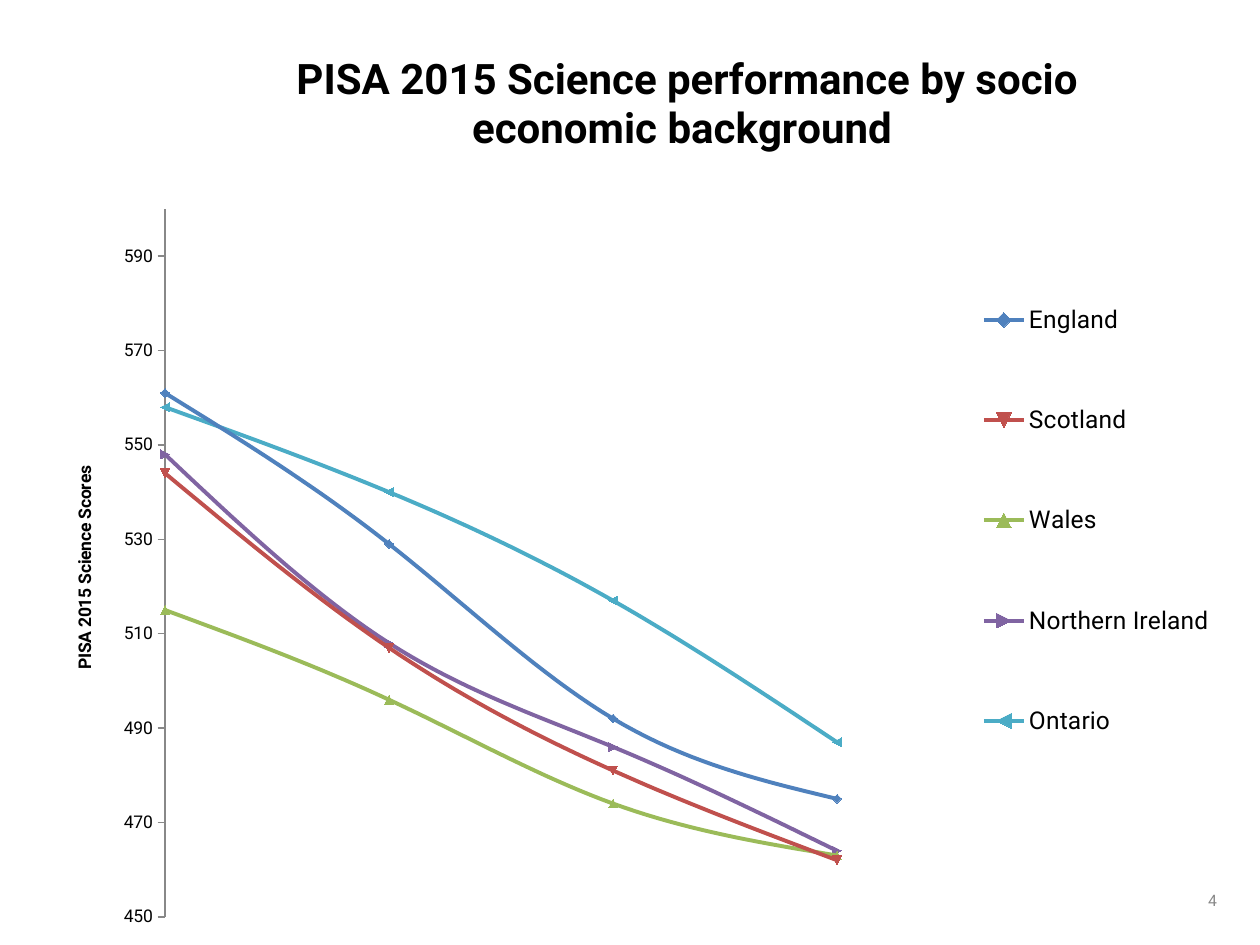
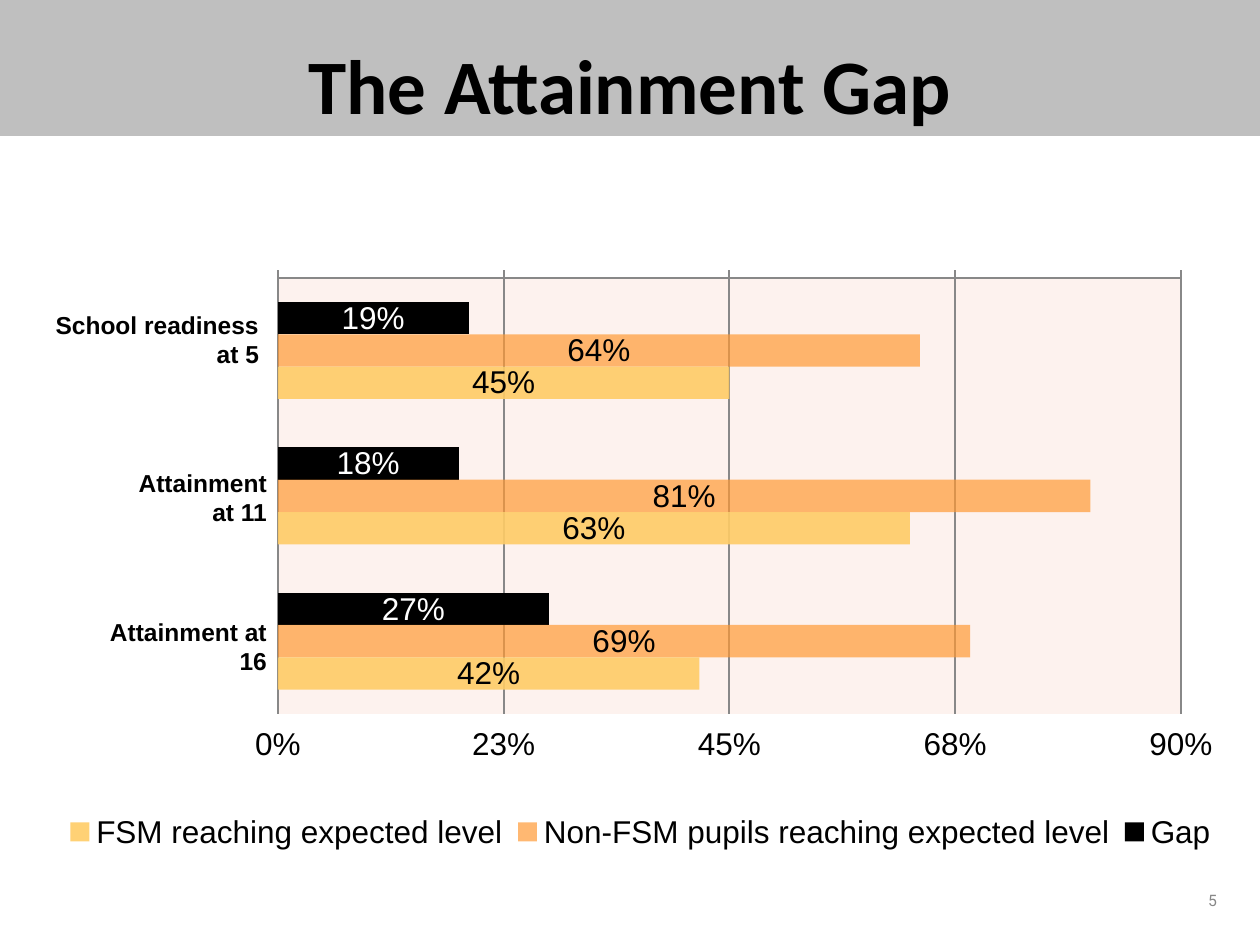
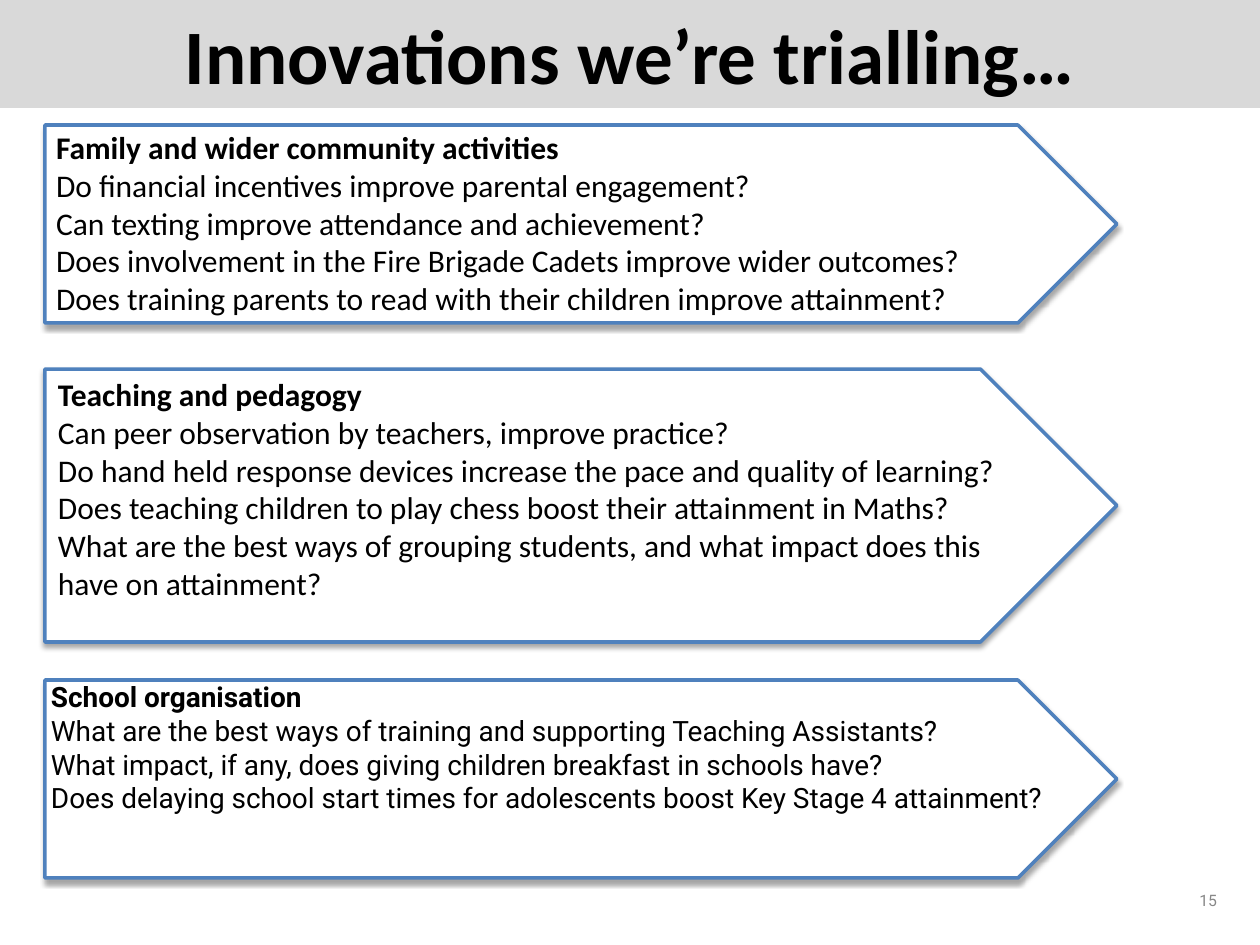
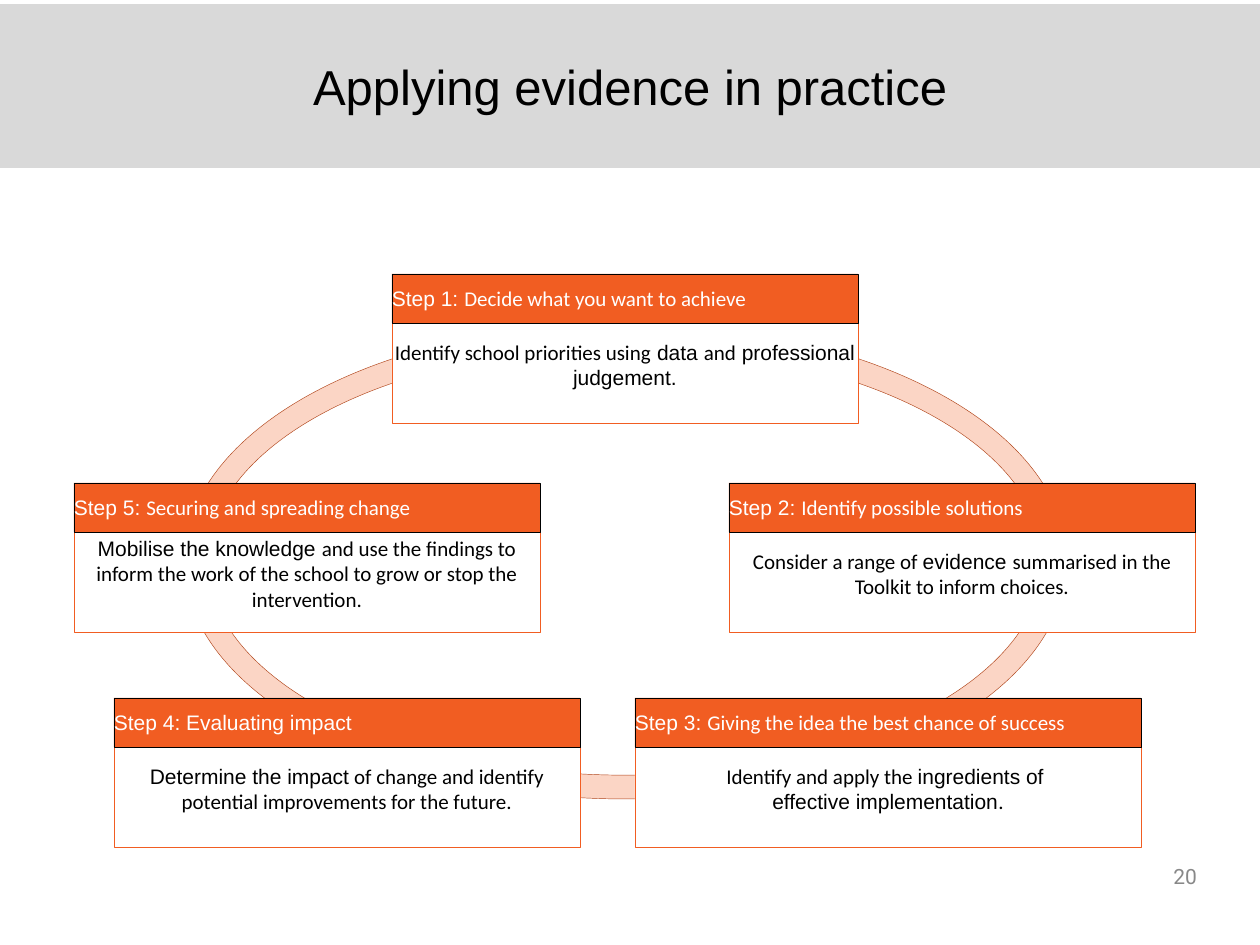
from lxml import etree
from pptx import Presentation
from pptx.chart.data import CategoryChartData, XyChartData
from pptx.dml.color import RGBColor
from pptx.enum.chart import XL_CHART_TYPE, XL_LABEL_POSITION, XL_LEGEND_POSITION
from pptx.enum.chart import XL_TICK_LABEL_POSITION, XL_TICK_MARK
from pptx.enum.shapes import MSO_SHAPE
from pptx.enum.text import MSO_ANCHOR, MSO_AUTO_SIZE, PP_ALIGN
from pptx.oxml import parse_xml
from pptx.oxml.ns import nsdecls, qn
from pptx.util import Pt

SCALE = 914400 / 126
LEFT, MID, RIGHT = PP_ALIGN.LEFT, PP_ALIGN.CENTER, PP_ALIGN.RIGHT
TOP, CORE, BASE = MSO_ANCHOR.TOP, MSO_ANCHOR.MIDDLE, MSO_ANCHOR.BOTTOM
RECT, ARROW, RING = MSO_SHAPE.RECTANGLE, MSO_SHAPE.PENTAGON, MSO_SHAPE.DONUT
SCATTER, BARS = XL_CHART_TYPE.XY_SCATTER_SMOOTH, XL_CHART_TYPE.BAR_CLUSTERED
SIDE, UNDER = XL_LEGEND_POSITION.RIGHT, XL_LEGEND_POSITION.BOTTOM
NO_TICK, OUT_TICK = XL_TICK_MARK.NONE, XL_TICK_MARK.OUTSIDE
NO_LABEL, FAR = XL_TICK_LABEL_POSITION.NONE, XL_TICK_LABEL_POSITION.HIGH
CENTRE = XL_LABEL_POSITION.CENTER
BLACK, WHITE, GREY = "000000", "FFFFFF", "888888"
BLUE, ORANGE, RUST = "4F81BD", "F15D22", "B04419"
PALE, SILVER = "D9D9D9", "BFBFBF"
ARIAL, BODY, SANS = "Arial", "Calibri", "Roboto"

SCORES = [
    ("England", BLUE, (561, 529, 492, 475)),
    ("Scotland", "C0504D", (544, 507, 481, 462)),
    ("Wales", "9BBB59", (515, 496, 474, 463)),
    ("Northern Ireland", "8064A2", (548, 508, 486, 464)),
    ("Ontario", "4BACC6", (558, 540, 517, 487)),
]
GAPS = [
    ("Gap", BLACK, 100, WHITE, (0.19, 0.18, 0.27)),
    ("Non-FSM pupils reaching expected level", "FF9933", 69, BLACK, (0.64, 0.81, 0.69)),
    ("FSM reaching expected level", "FFCC66", 90, BLACK, (0.45, 0.63, 0.42)),
]
STAGES = [
    ((44, 304, 221, 129), "School readiness\vat 5"),
    ((84, 462, 189, 68), "Attainment\v at 11"),
    ((94, 611, 179, 68), "Attainment at 16"),
]
TRIALS = [
    ((45, 125, 1072, 198), (50, 122, 953, 204), 18, BODY, [
        "Family and wider community activities",
        "Do financial incentives improve parental engagement?",
        "Can texting improve attendance and achievement?",
        "Does involvement in the Fire Brigade Cadets improve wider outcomes?",
        "Does training parents to read with their children improve attainment?"]),
    ((45, 369, 1072, 273), (52, 369, 963, 242), 18, BODY, [
        "Teaching and pedagogy",
        "Can peer observation by teachers, improve practice?",
        "Do hand held response devices increase the pace and quality of learning?",
        "Does teaching children to play chess boost their attainment in Maths?",
        "What are the best ways of grouping students, and what impact does this "
        "have on attainment?"]),
    ((45, 680, 1072, 198), (45, 674, 1013, 186), 16, SANS, [
        "School organisation",
        "What are the best ways of training and supporting Teaching Assistants?",
        "What impact, if any, does giving children breakfast in schools have?",
        "Does delaying school start times for adolescents boost Key Stage 4 attainment?"]),
]
STEPS = [
    (729, 483, 466, 50, [("Step 2: ", ARIAL), ("Identify possible solutions", BODY)],
     [[("Consider a range of ", BODY), ("evidence ", ARIAL),
       ("summarised in the Toolkit to inform choices.", BODY)]]),
    (114, 698, 466, 60, [("Step 4: Evaluating impact", ARIAL)],
     [[("Determine the impact", ARIAL),
       (" of change and identify potential improvements for the future.", BODY)]]),
    (74, 483, 466, 77, [("Step 5: ", ARIAL), ("Securing and spreading change", BODY)],
     [[("Mobilise the knowledge ", ARIAL),
       ("and use the findings to inform the work of the school to grow or stop "
        "the intervention.", BODY)]]),
    (635, 698, 506, 60,
     [("Step 3: ", ARIAL), ("Giving the idea the best chance of success", BODY)],
     [[("Identify and apply the ", BODY), ("ingredients of ", ARIAL)],
      [("effective implementation", ARIAL), (".", BODY)]]),
    (392, 274, 466, 50, [("Step 1: ", ARIAL), ("Decide what you want to achieve", BODY)],
     [[("Identify school priorities using", BODY), (" data ", ARIAL), ("and", BODY),
       (" professional judgement.", ARIAL)]]),
]


def px(size):
    """Turn pixels into EMU."""
    return round(size * SCALE)


def rgb(hue):
    """Turn a hex string into a colour."""
    return RGBColor.from_string(hue)


def style(font, size, name, hue=BLACK, bold=False):
    """Set the look of a font."""
    font.size, font.name, font.bold = Pt(size), name, bold
    font.color.rgb = rgb(hue)


def fade(node, alpha):
    """Make the first colour under a node see-through."""
    shade = node.find(".//" + qn("a:srgbClr"))
    etree.SubElement(shade, qn("a:alpha")).set("val", str(alpha * 1000))


def paint(part, hue, alpha=100):
    """Fill a shape or a chart format with one colour."""
    part.fill.solid()
    part.fill.fore_color.rgb = rgb(hue)
    if alpha < 100:
        fade(part._element, alpha)


def stroke(line, hue, width):
    """Set the colour and width of a line."""
    line.color.rgb = rgb(hue)
    line.width = Pt(width)


def shape(shapes, kind, box, hue, edge, width, alpha=100):
    """Add a filled and outlined preset shape."""
    item = shapes.add_shape(kind, *map(px, box))
    item.shadow.inherit = False
    paint(item, hue, alpha)
    stroke(item.line, edge, width)
    return item


def frame(item, anchor, inset):
    """Set up the text frame of a shape."""
    area = item.text_frame
    area.auto_size = MSO_AUTO_SIZE.NONE
    area.word_wrap = True
    area.vertical_anchor = anchor
    area.margin_left = area.margin_right = px(inset)
    area.margin_top = area.margin_bottom = px(inset)
    return area


def write(shapes, box, lines, size, name=SANS, hue=BLACK, align=LEFT,
          anchor=TOP, inset=6, bold=False):
    """Add a text box whose lines are strings or lists of (text, font) runs."""
    area = frame(shapes.add_textbox(*map(px, box)), anchor, inset)
    for spot, line in enumerate(lines):
        para = area.add_paragraph() if spot else area.paragraphs[0]
        para.alignment = align
        if isinstance(line, str):
            para.text = line
            for run in para.runs:
                style(run.font, size, name, hue, bold)
            continue
        for words, face in line:
            run = para.add_run()
            run.text = words
            style(run.font, size, face, hue, bold)
    return area


def band(slide, box, words, hue, size=44, name=BODY, bold=True, anchor=CORE):
    """Turn the title into a coloured band."""
    title = slide.shapes.title
    title.left, title.top, title.width, title.height = map(px, box)
    paint(title, hue)
    area = frame(title, anchor, 6)
    area.text = words
    area.paragraphs[0].alignment = MID
    style(area.paragraphs[0].runs[0].font, size, name, BLACK, bold)


def number(slide, digits, box=(1192, 885, 31, 31), size=9, inset=6):
    """Add the page number."""
    write(slide.shapes, box, [digits], size, hue=GREY, align=RIGHT, anchor=CORE, inset=inset)


def place(node, spot, box, part, inner=False):
    """Fix a chart part at pixels counted from the corner of the chart's box."""
    for old in node.findall(qn("c:layout")):
        node.remove(old)
    body = '<c:layoutTarget val="inner"/>' if inner else ""
    body += "".join(f'<c:{key}Mode val="edge"/>' for key in "xy")
    for key, size, full in zip("xywh", part, box[2:] * 2):
        body += f'<c:{key} val="{size / full:.4f}"/>'
    node.insert(spot, parse_xml(
        f'<c:layout {nsdecls("c")}><c:manualLayout>{body}</c:manualLayout></c:layout>'))


def add_chart(slide, kind, box, data, plot):
    """Add a chart with the shared base font and a fixed plot area."""
    chart = slide.shapes.add_chart(kind, *map(px, box), data).chart
    style(chart.font, 10, SANS)
    place(chart._chartSpace.chart.plotArea, 0, box, plot, True)
    return chart


def legend(chart, spot, size, name, box, part):
    """Add a legend at a fixed place."""
    chart.has_legend = True
    chart.legend.position = spot
    style(chart.legend.font, size, name)
    place(chart.legend._element, 1, box, part)


def scores(slide, box):
    """Draw the smooth score curves."""
    data = XyChartData()
    for name, _, marks in SCORES:
        row = data.add_series(name)
        for rank, mark in enumerate(marks, 1):
            row.add_data_point(rank, mark)
    chart = add_chart(slide, SCATTER, box, data, (117, 167, 784, 708))
    chart.has_title = True
    title = chart.chart_title
    title.text_frame.text = "PISA 2015 Science performance by socio economic background "
    style(title.text_frame.paragraphs[0].runs[0].font, 24, SANS, bold=True)
    place(title._element, 1, box, (241, 0))
    legend(chart, SIDE, 14, SANS, box, (931, 193, 235, 571))
    ranks, axis = chart.category_axis, chart.value_axis
    ranks.visible = ranks.has_major_gridlines = False
    ranks.minimum_scale, ranks.maximum_scale = 1, 4.5
    axis.has_major_gridlines = False
    axis.minimum_scale, axis.maximum_scale, axis.major_unit = 450, 600, 20
    axis.major_tick_mark = OUT_TICK
    stroke(axis.format.line, GREY, 0.75)
    label = axis.axis_title.text_frame
    label.text = "PISA 2015 Science Scores"
    label._txBody.bodyPr.set("rot", "-5400000")
    style(label.paragraphs[0].runs[0].font, 10, SANS, bold=True)
    chart.plots[0].vary_by_categories = False
    for row, (_, hue, _) in zip(chart.plots[0].series, SCORES):
        stroke(row.format.line, hue, 2.25)
        paint(row.marker.format, hue)
        stroke(row.marker.format.line, hue, 0.75)
        row._element.find(qn("c:smooth")).set("val", "1")


def gaps(slide, box):
    """Draw the attainment bars."""
    data = CategoryChartData(number_format="0%")
    data.categories = ["1", "2", "3"]
    for name, _, _, _, rates in GAPS:
        data.add_series(name, rates)
    chart = add_chart(slide, BARS, box, data, (223, 36, 903, 436))
    chart.has_title = False
    legend(chart, UNDER, 18, ARIAL, box, (0, 561, 1171, 58))
    chart.legend.include_in_layout = True
    back = parse_xml(f'<c:spPr {nsdecls("c", "a")}><a:solidFill>'
                     '<a:srgbClr val="FBCEBD"/></a:solidFill></c:spPr>')
    fade(back, 25)
    chart._chartSpace.chart.plotArea.append(back)
    stages, axis = chart.category_axis, chart.value_axis
    stages.reverse_order = True
    stages.tick_label_position = NO_LABEL
    stages.major_tick_mark = NO_TICK
    stages.format.line.fill.background()
    axis.minimum_scale, axis.maximum_scale, axis.major_unit = 0, 0.9, 0.225
    axis.major_tick_mark, axis.tick_label_position = OUT_TICK, FAR
    axis.tick_labels.number_format = "0%"
    axis.tick_labels.number_format_is_linked = False
    style(axis.tick_labels.font, 18, ARIAL)
    stroke(axis.format.line, GREY, 1)
    stroke(axis.major_gridlines.format.line, GREY, 1)
    plot = chart.plots[0]
    plot.gap_width, plot.vary_by_categories = 150, False
    for row, (_, hue, alpha, ink, _) in zip(plot.series, GAPS):
        row.format.fill.solid()
        row.format.fill.fore_color.rgb = rgb(hue)
        if alpha < 100:
            fade(row._element, alpha)
        tags = row.data_labels
        tags.show_value, tags.position = True, CENTRE
        tags.number_format, tags.number_format_is_linked = "0%", False
        style(tags.font, 18, ARIAL, ink)


def trial(slide, box, inner, size, name, lines):
    """Draw one arrow panel with its questions."""
    plate = shape(slide.shapes, ARROW, box, WHITE, BLUE, 2)
    glow = plate._element.spPr.find(qn("a:effectLst"))
    glow.append(parse_xml(
        f'<a:outerShdw {nsdecls("a")} blurRad="{Pt(3)}" dist="{Pt(1.8)}" dir="5400000" '
        f'rotWithShape="0"><a:srgbClr val="{BLACK}"/></a:outerShdw>'))
    fade(glow, 35)
    area = write(slide.shapes, inner, lines, size, name)
    area.paragraphs[0].runs[0].font.bold = True


def step(slide, left, top, width, tall, head, body):
    """Draw one step card as a group."""
    shapes = slide.shapes.add_group_shape().shapes
    shape(shapes, RECT, (left, top + 33, width, 116), WHITE, ORANGE, 0.25)
    write(shapes, (left, top + 33 + (116 - tall) // 2, width, tall), body, 12,
          align=MID, anchor=CORE, inset=0)
    shape(shapes, RECT, (left, top, width, 49), ORANGE, BLACK, 0.25)
    write(shapes, (left, top + 6, width, 37), [head], 12, hue=WHITE, anchor=CORE, inset=0)


def science(slide):
    """Fill the science scores slide."""
    number(slide, "4")
    scores(slide, (48, 42, 1176, 903))


def attainment(slide):
    """Fill the attainment gap slide."""
    band(slide, (0, 0, 1260, 136), "The Attainment Gap", SILVER, anchor=BASE)
    gaps(slide, (55, 242, 1171, 630))
    for box, words in STAGES:
        write(slide.shapes, box, [words], 14, ARIAL, align=RIGHT, bold=True)
    number(slide, "5")


def trials(slide):
    """Fill the innovations slide."""
    band(slide, (0, 0, 1260, 108), "Innovations we’re trialling…", PALE)
    for item in TRIALS:
        trial(slide, *item)
    number(slide, "15")


def cycle(slide):
    """Fill the evidence cycle slide."""
    band(slide, (0, 4, 1260, 164), "Applying evidence in practice", PALE, 28, ARIAL, False)
    ring = shape(slide.shapes, RING, (184, 323, 883, 476), ORANGE, RUST, 0.25, 26)
    ring.adjustments[0] = 0.05
    for item in STEPS:
        step(slide, *item)
    number(slide, "20", (903, 858, 294, 37), 12, 0)


def main():
    """Build the slides and save them."""
    deck = Presentation()
    deck.slide_width, deck.slide_height = px(1260), px(945)
    titled, blank = deck.slide_layouts[5], deck.slide_layouts[6]
    for layout, fill in ((blank, science), (titled, attainment), (titled, trials), (titled, cycle)):
        fill(deck.slides.add_slide(layout))
    deck.save("out.pptx")


if __name__ == "__main__":
    main()
